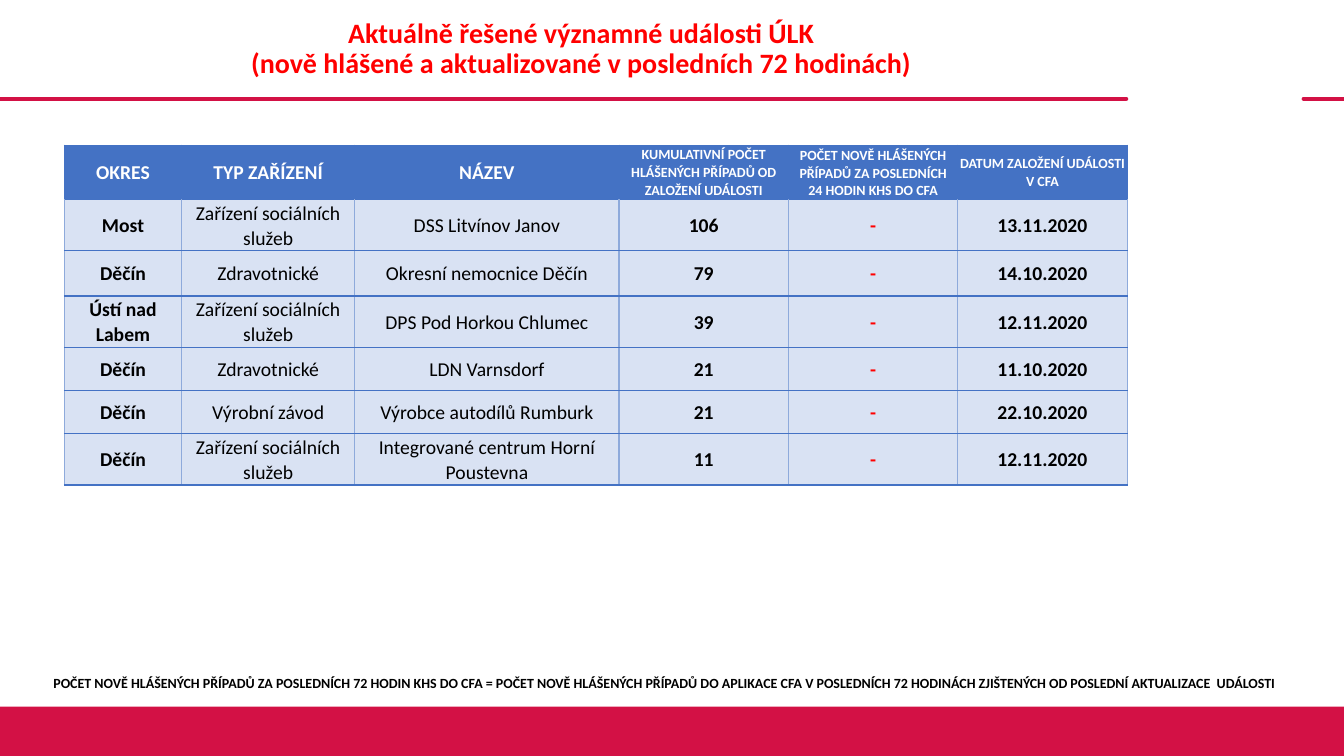
from lxml import etree
from pptx import Presentation
from pptx.dml.color import RGBColor
from pptx.enum import shapes, text
from pptx.oxml import ns
from pptx.util import Inches, Pt

# Content
TITLE = ["Aktuálně řešené významné události ÚLK",
         "(nově hlášené a aktualizované v posledních 72 hodinách)"]
HEADERS = ["OKRES", "TYP ZAŘÍZENÍ", "NÁZEV",
           "KUMULATIVNÍ POČET HLÁŠENÝCH PŘÍPADŮ OD ZALOŽENÍ UDÁLOSTI",
           "POČET NOVĚ HLÁŠENÝCH PŘÍPADŮ ZA POSLEDNÍCH 24 HODIN KHS DO CFA",
           "DATUM ZALOŽENÍ UDÁLOSTI V CFA"]
EVENTS = [
    ("Most", "Zařízení sociálních služeb", "DSS Litvínov Janov", "106", "-", "13.11.2020"),
    ("Děčín", "Zdravotnické", "Okresní nemocnice Děčín", "79", "-", "14.10.2020"),
    ("Ústí nad Labem", "Zařízení sociálních služeb", "DPS Pod Horkou Chlumec", "39", "-", "12.11.2020"),
    ("Děčín", "Zdravotnické", "LDN Varnsdorf", "21", "-", "11.10.2020"),
    ("Děčín", "Výrobní závod", "Výrobce autodílů Rumburk", "21", "-", "22.10.2020"),
    ("Děčín", "Zařízení sociálních služeb", "Integrované centrum Horní Poustevna", "11", "-", "12.11.2020"),
]
FOOTNOTE = ("POČET NOVĚ HLÁŠENÝCH PŘÍPADŮ ZA POSLEDNÍCH 72 HODIN KHS DO CFA = "
            "POČET NOVĚ HLÁŠENÝCH PŘÍPADŮ DO APLIKACE CFA V POSLEDNÍCH 72 HODINÁCH "
            "ZJIŠTENÝCH OD POSLEDNÍ AKTUALIZACE  UDÁLOSTI")

# Layout and style
COLUMN_WIDTHS = [1.16, 1.72, 2.62, 1.68, 1.68, 1.68]
ROW_HEIGHTS = [0.43, 0.45, 0.45, 0.43, 0.43, 0.43, 0.43]
HEADER_INSETS = [(0.06, 0)] * 3 + [(0, 0), (0.05, 0.01), (0, 0)]
RULES = [(0, 11.17), (12.93, 13.33)]
REGULAR_COLUMNS = (1, 2)
NEW_CASES_COLUMN = 4
FONT = "Calibri"
CRIMSON = RGBColor(0xD3, 0x11, 0x45)
RED = RGBColor(0xFF, 0, 0)
BLACK = RGBColor(0, 0, 0)
WHITE = RGBColor(0xFF, 0xFF, 0xFF)
BLUE = RGBColor(0x44, 0x72, 0xC4)
LIGHT_BLUE = RGBColor(0x8E, 0xAA, 0xDB)
PALE_BLUE = RGBColor(0xD9, 0xE2, 0xF3)


def add_span(para, words, size, color, bold=True):
    span = para.add_run()
    span.text = words
    span.font.name = FONT
    span.font.size = Pt(size)
    span.font.bold = bold
    span.font.color.rgb = color


def centre(para, spacing):
    para.alignment = text.PP_ALIGN.CENTER
    para.line_spacing = spacing


def set_borders(cell, side_color):
    properties = cell._tc.get_or_add_tcPr()
    for side, color in zip("LRTB", (side_color, side_color, BLUE, BLUE)):
        line = etree.SubElement(properties, ns.qn(f"a:ln{side}"), w=str(Pt(1)))
        fill = etree.SubElement(line, ns.qn("a:solidFill"))
        etree.SubElement(fill, ns.qn("a:srgbClr"), val=str(color))


def fill_cell(cell, words, size, color, bold, spacing, insets, fill, side_color):
    side, top = insets
    cell.margin_left = cell.margin_right = Inches(side)
    cell.margin_top, cell.margin_bottom = Inches(top), 0
    cell.vertical_anchor = text.MSO_ANCHOR.MIDDLE
    set_borders(cell, side_color)
    cell.fill.solid()
    cell.fill.fore_color.rgb = fill
    para = cell.text_frame.paragraphs[0]
    centre(para, spacing)
    add_span(para, words, size, color, bold)


deck = Presentation()
deck.slide_width, deck.slide_height = Inches(13.33), Inches(7.5)
page = deck.slides.add_slide(deck.slide_layouts[5])

# Rules under the title
for start, end in RULES:
    rule = page.shapes.add_connector(shapes.MSO_CONNECTOR.STRAIGHT, Inches(start),
                                     Inches(0.98), Inches(end), Inches(0.98))
    rule.line.color.rgb = CRIMSON
    rule.line.width = Pt(3)
    properties = rule._element.spPr
    properties.find(ns.qn("a:ln")).set("cap", "rnd")
    etree.SubElement(properties, ns.qn("a:effectLst"))

# Bottom band
band = page.shapes.add_shape(shapes.MSO_SHAPE.RECTANGLE, 0, Inches(7.01),
                             deck.slide_width, Inches(0.49))
band.shadow.inherit = False
band.fill.solid()
band.fill.fore_color.rgb = CRIMSON
band.line.fill.background()

# Title
title = page.shapes.title
title.left, title.top = Inches(0.36), 0
title.width, title.height = Inches(10.81), Inches(0.98)
frame = title.text_frame
frame.word_wrap = True
frame.auto_size = text.MSO_AUTO_SIZE.NONE
frame.vertical_anchor = text.MSO_ANCHOR.MIDDLE
para = frame.paragraphs[0]
centre(para, 0.9)
add_span(para, TITLE[0], 20, RED)
para.add_line_break()
add_span(para, TITLE[1], 20, RED)

# Table of events
table = page.shapes.add_table(
    len(ROW_HEIGHTS), len(COLUMN_WIDTHS), Inches(0.64), Inches(1.44),
    Inches(sum(COLUMN_WIDTHS)), Inches(sum(ROW_HEIGHTS))).table
table.horz_banding = False
for column, width in zip(table.columns, COLUMN_WIDTHS):
    column.width = Inches(width)
for row, height in zip(table.rows, ROW_HEIGHTS):
    row.height = Inches(height)

for c, words in enumerate(HEADERS):
    size, spacing = (14, 1.07) if c < 3 else (10, 1.05)
    fill_cell(table.cell(0, c), words, size, WHITE, True, spacing,
              HEADER_INSETS[c], BLUE, BLUE)
for r, event in enumerate(EVENTS, start=1):
    for c, words in enumerate(event):
        color = RED if c == NEW_CASES_COLUMN else BLACK
        fill_cell(table.cell(r, c), words, 14, color, c not in REGULAR_COLUMNS,
                  1.07, (0.07, 0), PALE_BLUE, LIGHT_BLUE)

# Footnote
box = page.shapes.add_textbox(0, Inches(6.63), Inches(13.17), Inches(0.27))
box.text_frame.word_wrap = True
box.text_frame.auto_size = text.MSO_AUTO_SIZE.SHAPE_TO_FIT_TEXT
para = box.text_frame.paragraphs[0]
centre(para, 1.05)
add_span(para, FOOTNOTE, 10, BLACK)

deck.save("out.pptx")
